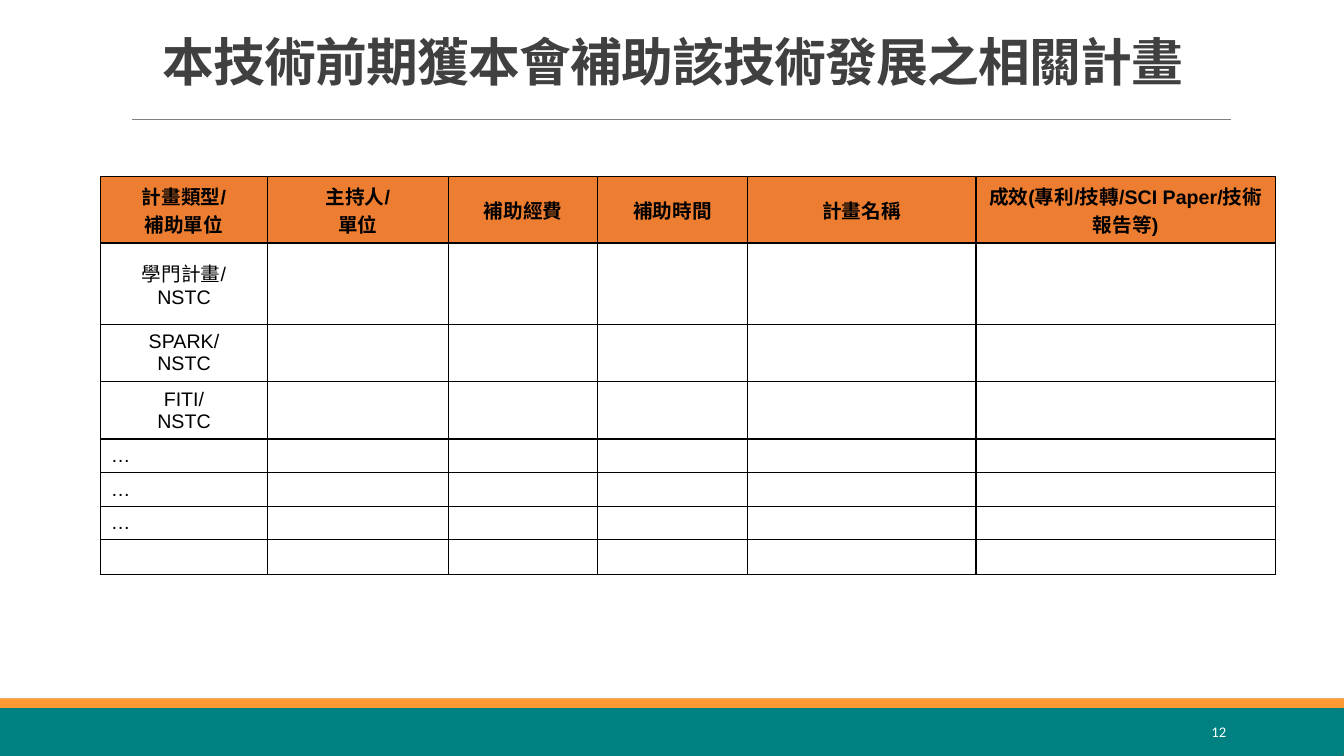
import pptx
import pptx.dml.color
import pptx.enum.lang
import pptx.enum.shapes
import pptx.enum.text
import pptx.oxml.ns
import pptx.util
from lxml import etree

Inches = pptx.util.Inches
Pt = pptx.util.Pt
ALIGN = pptx.enum.text.PP_ALIGN
ANCHOR = pptx.enum.text.MSO_ANCHOR
qn = pptx.oxml.ns.qn

COLORS = {
    "title": "404040", "rule": "808080", "number": "FFFFFF",
    "rust": "BD582C", "amber": "E48312", "teal": "008080", "orange": "FF9933",
    "header": "ED7D31", "ink": "000000",
}
TITLE = "本技術前期獲本會補助該技術發展之相關計畫"
PAGE_NUMBER = "12"
HEADERS = [
    ["計畫類型/", "補助單位"], ["主持人/", "單位"], ["補助經費"], ["補助時間"],
    ["計畫名稱"], ["成效(專利/技轉/SCI Paper/技術報告等)"],
]
PROJECTS = [
    ["學門計畫/", "NSTC"], ["SPARK/", "NSTC"], ["FITI/", "NSTC"],
    ["…"], ["…"], ["…"], [],
]
COLUMN_WIDTHS = [1.65, 1.8, 1.48, 1.48, 2.27, 2.97]
ROW_HEIGHTS = [0.66, 0.81, 0.54, 0.54, 0.32, 0.32, 0.32, 0.34]
TABLE_LEFT, TABLE_TOP = 1, 1.75
TABLE_SIZE = 14
# left, top, width, height, colour, outlined
FOOTER_BARS = [
    (0, 7, 13.33, 0.5, "rust", False),
    (0, 6.93, 13.33, 0.07, "amber", False),
    (0, 7.02, 13.32, 0.47, "teal", True),
    (0, 6.94, 13.32, 0.08, "orange", True),
]


def rgb(name):
    return pptx.dml.color.RGBColor.from_string(COLORS[name])


def add_span(para, text, size, font, color, bold=False):
    span = para.add_run()
    span.text = text
    span.font.size = Pt(size)
    span.font.name = font
    span.font.bold = bold
    span.font.color.rgb = rgb(color)
    span.font.language_id = pptx.enum.lang.MSO_LANGUAGE_ID.TRADITIONAL_CHINESE
    return span


def add_text_box(page, left, top, width, height, anchor, align):
    """Add an empty wrapped box and return its first paragraph."""
    box = page.shapes.add_textbox(
        Inches(left), Inches(top), Inches(width), Inches(height))
    box.text_frame.word_wrap = True
    box.text_frame.vertical_anchor = anchor
    para = box.text_frame.paragraphs[0]
    para.alignment = align
    return para


def add_rule(page):
    rule = page.shapes.add_connector(
        pptx.enum.shapes.MSO_CONNECTOR.STRAIGHT,
        Inches(1.31), Inches(1.18), Inches(12.21), Inches(1.18))
    rule.line.color.rgb = rgb("rule")
    rule.line.width = Pt(0.5)
    etree.SubElement(rule.element.spPr, qn("a:effectLst"))


def add_footer_bar(page, left, top, width, height, color, outlined):
    bar = page.shapes.add_shape(
        pptx.enum.shapes.MSO_SHAPE.RECTANGLE,
        Inches(left), Inches(top), Inches(width), Inches(height))
    bar.shadow.inherit = False
    bar.fill.solid()
    bar.fill.fore_color.rgb = rgb(color)
    if outlined:
        bar.line.color.rgb = rgb(color)
        bar.line.width = Pt(1.25)
    else:
        bar.line.fill.background()


def add_borders(cell):
    """Draw the four sides; borders must precede the fill in the XML."""
    properties = cell._tc.get_or_add_tcPr()
    for index, side in enumerate(("a:lnL", "a:lnR", "a:lnT", "a:lnB")):
        border = etree.Element(qn(side), w=str(Pt(1)))
        fill = etree.SubElement(border, qn("a:solidFill"))
        etree.SubElement(fill, qn("a:srgbClr"), val=COLORS["ink"])
        properties.insert(index, border)


def fill_cell(cell, lines, is_header):
    cell.vertical_anchor = ANCHOR.MIDDLE
    if is_header:
        cell.fill.solid()
        cell.fill.fore_color.rgb = rgb("header")
    else:
        cell.fill.background()
    add_borders(cell)
    frame = cell.text_frame
    for index, line in enumerate(lines):
        para = frame.paragraphs[0] if index == 0 else frame.add_paragraph()
        para.alignment = ALIGN.LEFT if line == "…" else ALIGN.CENTER
        add_span(para, line, TABLE_SIZE, "Arial", "ink", is_header)
    if not lines:
        etree.SubElement(frame.paragraphs[0]._p, qn("a:endParaRPr"),
                         sz=str(TABLE_SIZE * 100))


def add_project_table(page):
    rows = [HEADERS]
    rows += [[kind] + [[]] * (len(HEADERS) - 1) for kind in PROJECTS]
    table = page.shapes.add_table(
        len(rows), len(HEADERS), Inches(TABLE_LEFT), Inches(TABLE_TOP),
        Inches(sum(COLUMN_WIDTHS)), Inches(sum(ROW_HEIGHTS))).table
    table.horz_banding = False
    for column, width in zip(table.columns, COLUMN_WIDTHS):
        column.width = Inches(width)
    for row, height in zip(table.rows, ROW_HEIGHTS):
        row.height = Inches(height)
    for r, row in enumerate(rows):
        for c, lines in enumerate(row):
            fill_cell(table.cell(r, c), lines, r == 0)


def main():
    deck = pptx.Presentation()
    deck.slide_width, deck.slide_height = Inches(13.33), Inches(7.5)
    page = deck.slides.add_slide(deck.slide_layouts[6])
    add_rule(page)
    for bar in FOOTER_BARS:
        add_footer_bar(page, *bar)
    para = add_text_box(page, 10.83, 7.06, 1.43, 0.4, ANCHOR.MIDDLE, ALIGN.RIGHT)
    add_span(para, PAGE_NUMBER, 10.5, "Calibri", "number")
    para = add_text_box(page, 1.36, -0.11, 10.63, 1.07, ANCHOR.BOTTOM, ALIGN.CENTER)
    para.line_spacing = 0.85
    title = add_span(para, TITLE, 37, "Calibri", "title", True)
    title.font._element.set("spc", "-50")
    add_project_table(page)
    deck.save("out.pptx")


if __name__ == "__main__":
    main()
